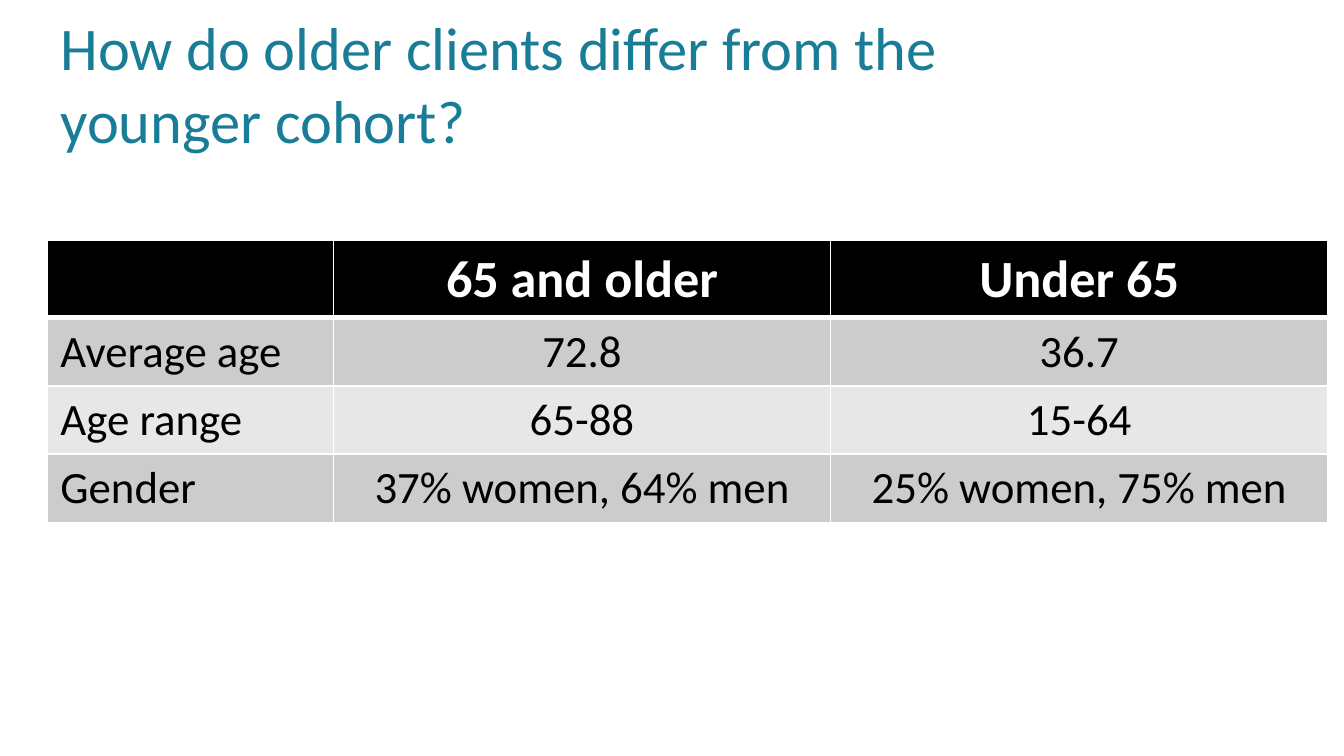
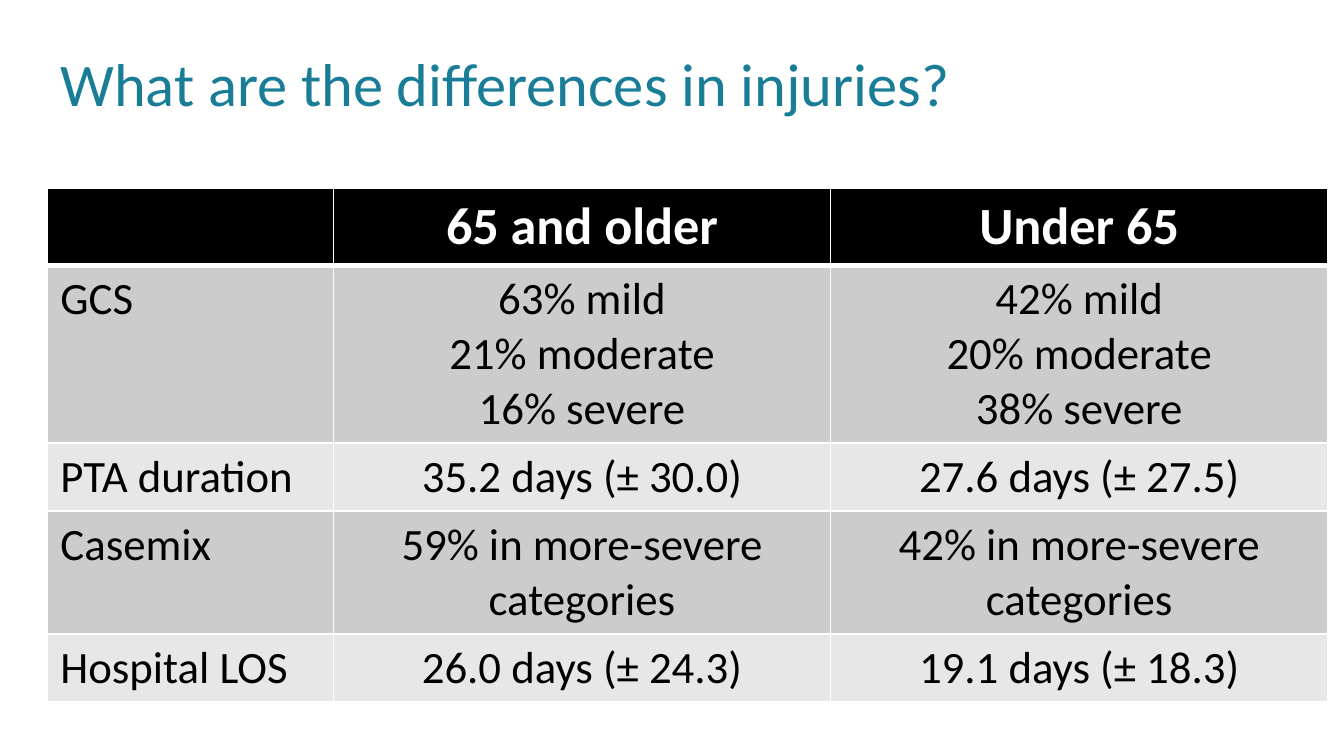
from lxml import etree
from pptx import Presentation
from pptx.dml.color import RGBColor
from pptx.enum import text as t
from pptx.oxml import ns
from pptx.util import Pt

FONT = "Calibri"
TEAL, BLACK, WHITE = "197D97", "000000", "FFFFFF"
BANDS = ("CCCCCC", "E7E7E7")
LEFT = 25.2
COLS = (153.4, 266.4, 266.4)
ROW = 29.5
HEAD = ("", "65 and older", "Under 65")
AGES = (
    ("Average age", "72.8", "36.7"),
    ("Age range", "65-88", "15-64"),
    ("Gender", "37% women, 64% men", "25% women, 75% men"),
)
INJURIES = (
    ("GCS", "63% mild\n21% moderate\n16% severe", "42% mild\n20% moderate\n38% severe"),
    ("PTA duration", "35.2 days (± 30.0)", "27.6 days (± 27.5)"),
    ("Casemix", "59% in more-severe categories", "42% in more-severe categories"),
    ("Hospital LOS", "26.0 days (± 24.3)", "19.1 days (± 18.3)"),
)


def paint(item, color):
    """Give a fill a solid colour."""
    item.solid()
    item.fore_color.rgb = RGBColor.from_string(color)


def write(frame, text, size=24, color=BLACK, bold=False, center=False):
    """Put formatted text in a frame, one paragraph a line."""
    frame.text = text
    for para in frame.paragraphs:
        para.alignment = t.PP_ALIGN.CENTER if center else t.PP_ALIGN.LEFT
        for run in para.runs:
            run.font.name, run.font.size, run.font.bold = FONT, Pt(size), bold
            paint(run.font.fill, color)


def edge(cell, top, bottom):
    """Draw white borders around a cell."""
    props = cell._tc.get_or_add_tcPr()
    for side, width in (("L", 1), ("R", 1), ("T", top), ("B", bottom)):
        line = etree.SubElement(props, ns.qn(f"a:ln{side}"), w=str(Pt(width)))
        fill = etree.SubElement(line, ns.qn("a:solidFill"))
        etree.SubElement(fill, ns.qn("a:srgbClr"), val=WHITE)


def add_title(slide, text):
    """Place and fill the slide title."""
    title = slide.shapes.title
    title.left, title.top, title.width, title.height = map(Pt, (LEFT, 16.6, 532.8, 55.4))
    frame = title.text_frame
    frame.word_wrap = True
    frame.auto_size = t.MSO_AUTO_SIZE.NONE
    frame.vertical_anchor = t.MSO_ANCHOR.MIDDLE
    write(frame, text, size=32.4, color=TEAL)


def add_grid(slide, rows, top, height):
    """Add a table with a black head and grey bands."""
    rows = (HEAD, *rows)
    shape = slide.shapes.add_table(
        len(rows), len(COLS), Pt(LEFT), Pt(top), Pt(sum(COLS)), Pt(height))
    grid = shape.table
    for col, width in zip(grid.columns, COLS):
        col.width = Pt(width)
    for r, row in enumerate(rows):
        grid.rows[r].height = Pt(ROW)
        head = r == 0
        style = dict(size=28, color=WHITE, bold=True) if head else {}
        for c, text in enumerate(row):
            cell = grid.cell(r, c)
            edge(cell, 3 if r == 1 else 1, 3 if head else 1)
            paint(cell.fill, BLACK if head else BANDS[(r - 1) % 2])
            write(cell.text_frame, text, center=c > 0, **style)
    shape.height = Pt(height)


def main():
    """Build and save the slides."""
    deck = Presentation()
    deck.slide_width, deck.slide_height = Pt(720), Pt(405)
    for title, rows, top, height in (
        ("How do older clients differ from the younger cohort?", AGES, 128.9, 149),
        ("What are the differences in injuries?", INJURIES, 100.8, 271.4),
    ):
        slide = deck.slides.add_slide(deck.slide_layouts[5])
        add_title(slide, title)
        add_grid(slide, rows, top, height)
    deck.save("out.pptx")


if __name__ == "__main__":
    main()
